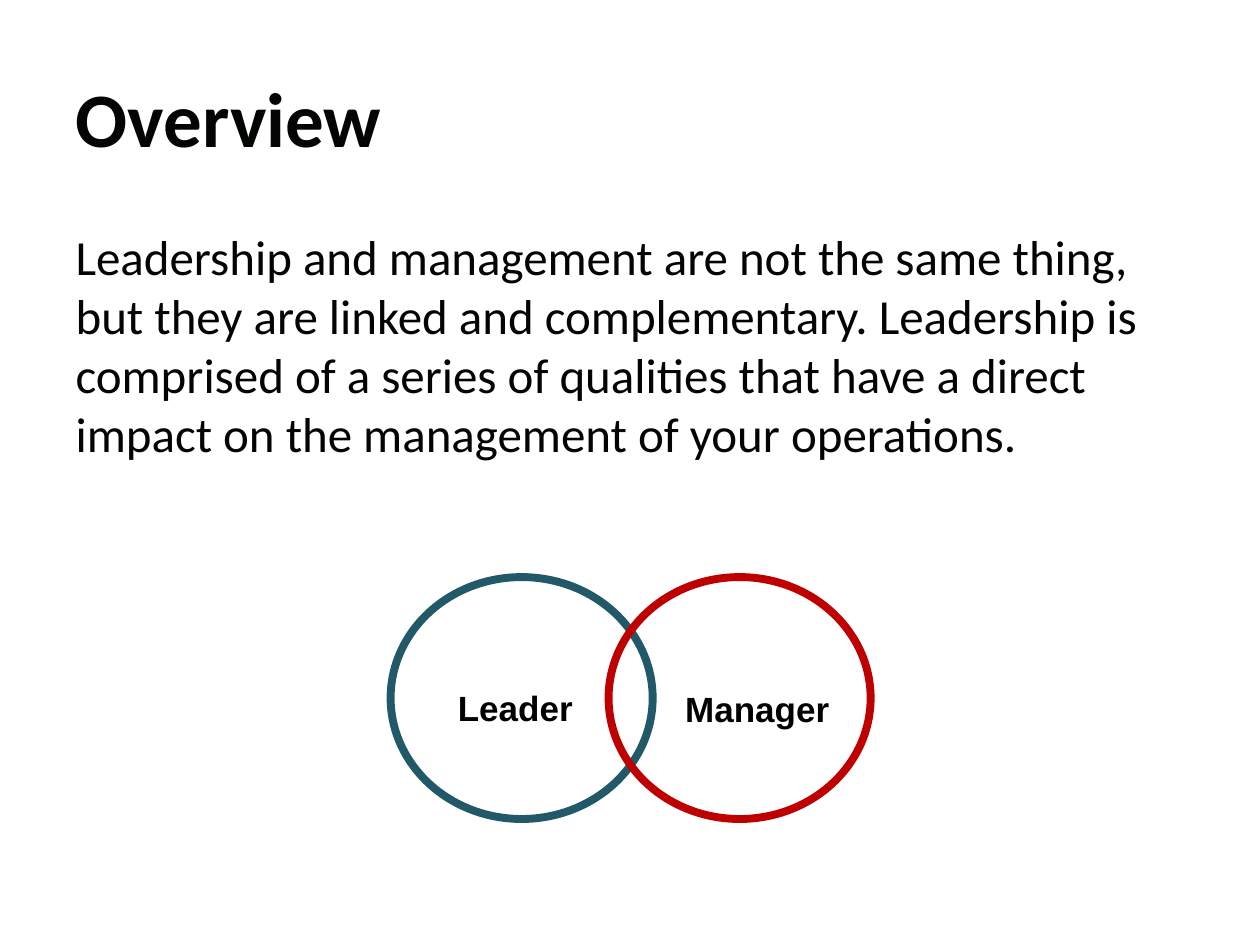
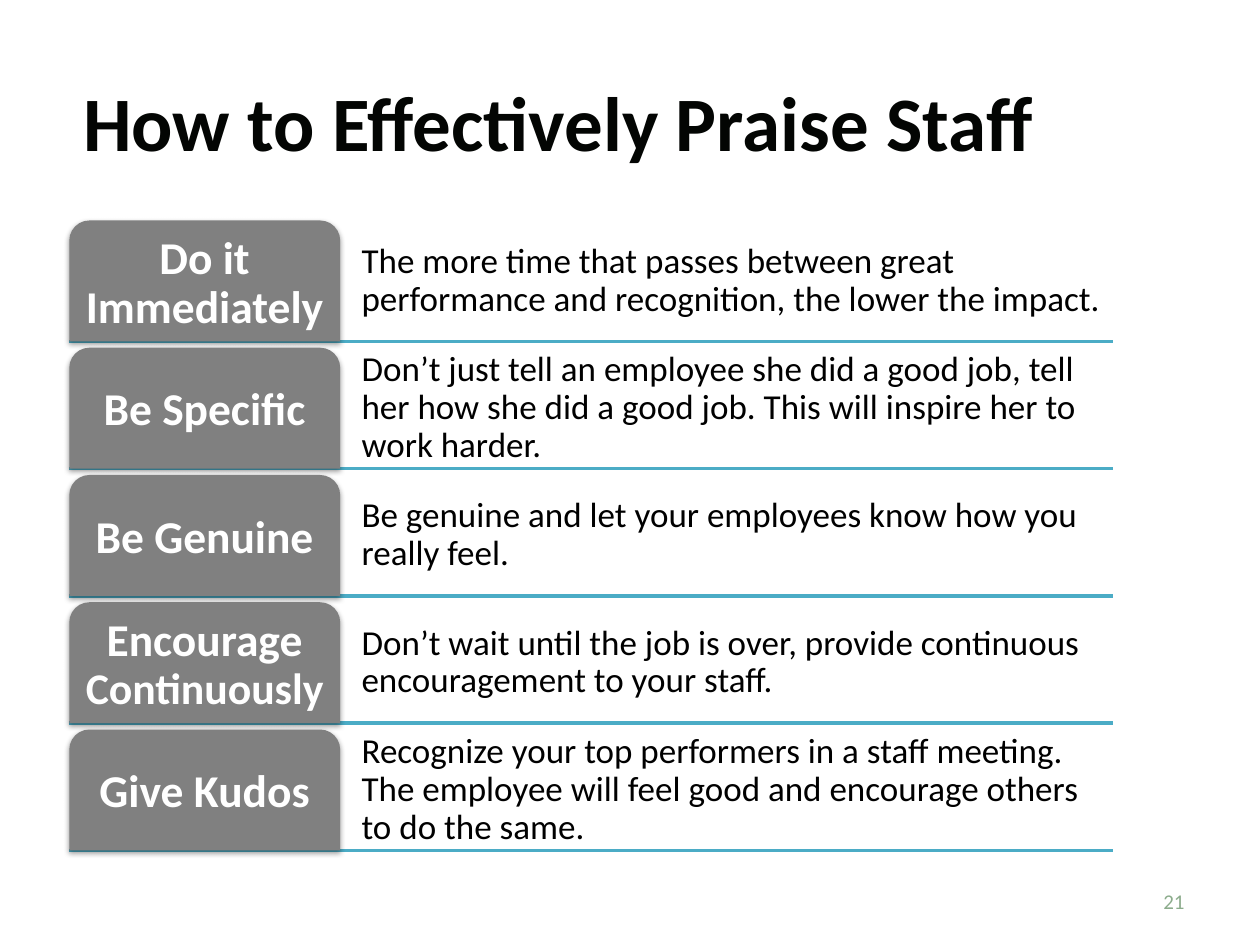
from typing import NamedTuple, Optional

from lxml import etree
from pptx import Presentation
from pptx.dml.color import RGBColor
from pptx.enum.shapes import MSO_CONNECTOR as Connector, MSO_SHAPE as Shape
from pptx.enum.text import MSO_ANCHOR as Anchor, MSO_AUTO_SIZE as AutoSize, PP_ALIGN as Align
from pptx.oxml.ns import qn
from pptx.util import Inches, Pt

# Shared look
INK, BLACK, WHITE = "030503", "000000", "FFFFFF"
TEAL, RED = "215968", "BF0000"
GRAY, RULE_BLUE, NUMBER_GREEN = "808080", "4BACC6", "8CAC8C"
BODY_FONT, LABEL_FONT = "Calibri", "Arial"


class Area(NamedTuple):
    left: float
    top: float
    width: float
    height: float


class Span(NamedTuple):
    text: str
    size: float
    color: str = BLACK
    bold: bool = False
    font: str = BODY_FONT


class Circle(NamedTuple):
    left: float
    color: str
    fill: Optional[str]
    label: str
    label_area: Area


class Tip(NamedTuple):
    label: list[Span]
    advice: str


def rgb(value: str) -> RGBColor:
    return RGBColor.from_string(value)


def lengths(area: Area) -> list:
    return [Inches(value) for value in area]


def place(shape, area: Area) -> None:
    shape.left, shape.top, shape.width, shape.height = lengths(area)


def paint(shape, color: Optional[str]) -> None:
    if color is None:
        shape.fill.background()
    else:
        shape.fill.solid()
        shape.fill.fore_color.rgb = rgb(color)


def write(shape, spans: list[Span], align=Align.LEFT, anchor=Anchor.MIDDLE,
          insets=(0.1, 0.05, 0.1, 0.05), spacing: float = 1.0):
    """Fill a shape with one paragraph, run by run."""
    frame = shape.text_frame
    frame.word_wrap = True
    frame.auto_size = AutoSize.NONE
    frame.vertical_anchor = anchor
    frame.margin_left, frame.margin_top, frame.margin_right, frame.margin_bottom = map(Inches, insets)
    para = frame.paragraphs[0]
    para.alignment, para.line_spacing, para.space_before = align, spacing, Pt(0)
    for span in spans:
        run = para.add_run()
        run.text = span.text
        run.font.name, run.font.size, run.font.bold = span.font, Pt(span.size), span.bold
        run.font.color.rgb = rgb(span.color)
    return para


def add_text(page, area: Area, spans: list[Span], **options) -> None:
    write(page.shapes.add_textbox(*lengths(area)), spans, **options)


def add_page(deck, layout: int, title: str, title_area: Area):
    page = deck.slides.add_slide(deck.slide_layouts[layout])
    place(page.shapes.title, title_area)
    write(page.shapes.title, [Span(title, 44, INK, True)])
    return page


def add_circle(page, circle: Circle) -> None:
    ring = page.shapes.add_shape(Shape.OVAL, *lengths(Area(circle.left, 4.58, 2.08, 1.92)))
    ring.shadow.inherit = False
    paint(ring, circle.fill)
    ring.line.color.rgb = rgb(circle.color)
    ring.line.width = Pt(4.5)
    add_text(page, circle.label_area, [Span(circle.label, 20, BLACK, True, LABEL_FONT)],
             align=Align.CENTER, anchor=Anchor.TOP, insets=(0, 0.05, 0, 0.05))


def add_rule(page, left: float, right: float, y: float) -> None:
    rule = page.shapes.add_connector(
        Connector.STRAIGHT, Inches(left), Inches(y), Inches(right), Inches(y))
    rule.line.color.rgb = rgb(RULE_BLUE)
    rule.line.width = Pt(2)
    etree.SubElement(rule._element.spPr, qn("a:effectLst"))


def add_soft_shadow(shape) -> None:
    shape.shadow.inherit = False
    effects = shape._element.spPr.find(qn("a:effectLst"))
    shadow = etree.SubElement(effects, qn("a:outerShdw"), blurRad=str(Pt(3.1)),
                              dist=str(Pt(1.6)), dir="5400000", rotWithShape="0")
    color = etree.SubElement(shadow, qn("a:srgbClr"), val=BLACK)
    etree.SubElement(color, qn("a:alpha"), val="38000")


def add_tab(page, area: Area, spans: list[Span]) -> None:
    tab = page.shapes.add_shape(Shape.ROUND_2_SAME_RECTANGLE, *lengths(area))
    add_soft_shadow(tab)
    paint(tab, GRAY)
    tab.line.fill.background()
    write(tab, spans, align=Align.CENTER, insets=(0.05,) * 4, spacing=0.9)


def tab_span(text: str, size: float = 26) -> Span:
    return Span(text, size, WHITE, True)


CIRCLES = [
    Circle(3.1, TEAL, WHITE, "Leader", Area(3.42, 5.4, 1.34, 0.44)),
    Circle(4.83, RED, None, "Manager", Area(5.34, 5.41, 1.34, 0.44)),
]

TIPS = [
    Tip([tab_span("Do it Immediately")],
        "The more time that passes between great performance and recognition, "
        "the lower the impact."),
    Tip([tab_span("Be Specific")],
        "Don’t just tell an employee she did a good job, tell her how she did a good job. "
        "This will inspire her to work harder."),
    Tip([tab_span("Be Genuine")],
        "Be genuine and let your employees know how you really feel."),
    Tip([tab_span("Encourage "), tab_span("Continuously", 25)],
        "Don’t wait until the job is over, provide continuous encouragement to your staff."),
    Tip([tab_span("Give Kudos")],
        "Recognize your top performers in a staff meeting. The employee will feel good "
        "and encourage others to do the same."),
]


def build_overview(deck) -> None:
    page = add_page(deck, 1, "Overview", Area(0.5, 0.3, 9, 1.25))
    body = page.placeholders[1]
    place(body, Area(0.5, 1.75, 9, 4.95))
    para = write(body, [Span(
        "Leadership and management are not the same thing, but they are linked and "
        "complementary. Leadership is comprised of a series of qualities that have a "
        "direct impact on the management of your operations.", 28, INK)], anchor=Anchor.TOP)
    # Plain paragraph without bullet or hanging indent
    properties = para._p.get_or_add_pPr()
    properties.set("marL", "0")
    properties.set("indent", "0")
    etree.SubElement(properties, qn("a:buNone"))
    for circle in CIRCLES:
        add_circle(page, circle)


def build_praise(deck) -> None:
    page = add_page(deck, 5, "How to Effectively Praise Staff", Area(0.56, 0.33, 8.66, 1.25))
    left, top, height, pitch = 0.55, 1.75, 0.96, 1.01
    tab_width, advice_left, right = 2.15, 2.71, 8.83
    # One row per tip: rule, advice, tab
    for index, tip in enumerate(TIPS):
        row_top = top + index * pitch
        add_rule(page, left, right, row_top + height)
        add_text(page, Area(advice_left, row_top, right - advice_left, height),
                 [Span(tip.advice, 20)], insets=(0.16, 0.04, 0.04, 0.04), spacing=0.9)
        add_tab(page, Area(left, row_top, tab_width, height), tip.label)
    # Page number
    add_text(page, Area(7.17, 6.95, 2.33, 0.4), [Span("21", 12, NUMBER_GREEN)], align=Align.RIGHT)


def main() -> None:
    deck = Presentation()
    deck.slide_width, deck.slide_height = Inches(10), Inches(7.5)
    build_overview(deck)
    build_praise(deck)
    deck.save("out.pptx")


if __name__ == "__main__":
    main()
